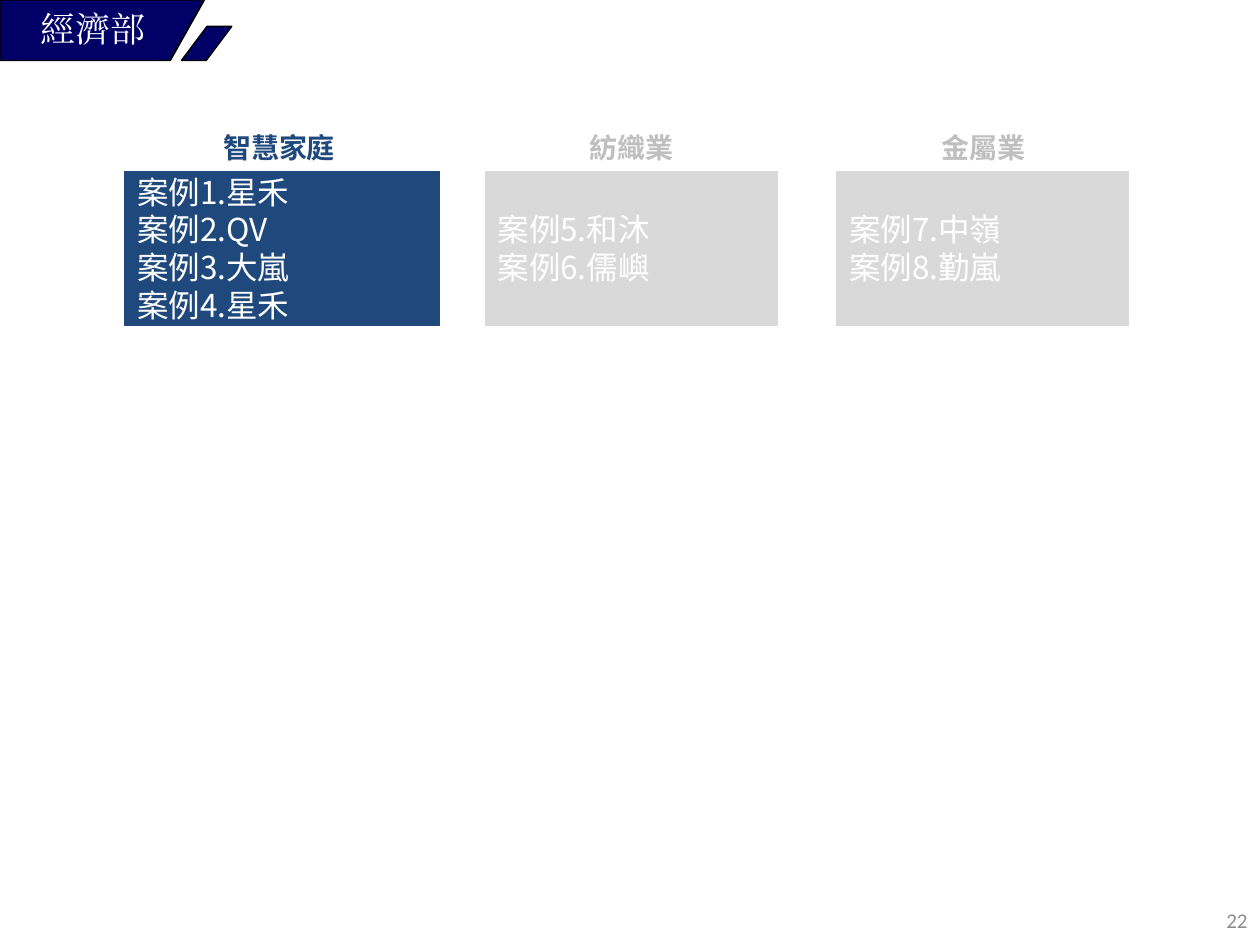
from dataclasses import dataclass

import pptx
import pptx.util
import pptx.dml.color
import pptx.enum.shapes
import pptx.enum.text
import pptx.oxml.ns
from lxml import etree
from pptx.util import Inches

HUES = {
    "navy": "000066", "blue": "1F497D", "pale": "D9D9D9", "gray": "BFBFBF",
    "page": "8C8C8C", "white": "FFFFFF", "black": "000000",
}
SANS = "Noto Sans CJK SC"
ALIGN = pptx.enum.text.PP_ALIGN
ANCHOR = pptx.enum.text.MSO_ANCHOR
KIND = pptx.enum.shapes.MSO_SHAPE
TOP, HIGH = 1.36, 1.22
HEAD_TOP, HEAD_HIGH = 0.99, 0.37
BAND = [(0, 0), (0, 0.48), (1.35, 0.48), (1.62, 0)]


@dataclass
class Field:
    title: str
    cases: list[str]
    left: float
    width: float
    head_left: float
    head_width: float
    fill: str
    ink: str


FIELDS = [
    Field("智慧家庭", ["星禾", "QV", "大嵐", "星禾"], 0.99, 2.5, 1.39, 1.65, "blue", "blue"),
    Field("紡織業", ["和沐", "儒嶼"], 3.85, 2.32, 4.26, 1.51, "pale", "gray"),
    Field("金屬業", ["中嶺", "勤嵐"], 6.64, 2.32, 7.05, 1.51, "pale", "gray"),
]


def hue(name: str) -> pptx.dml.color.RGBColor:
    return pptx.dml.color.RGBColor.from_string(HUES[name])


def put_text(shape, text: str, *, size: float, color: str, font: str = SANS,
             bold: bool = False, align=ALIGN.LEFT, anchor=ANCHOR.TOP) -> None:
    """Fill a shape with one paragraph for each line of text."""
    frame = shape.text_frame
    frame.word_wrap = True
    frame.vertical_anchor = anchor
    frame.text = text
    for para in frame.paragraphs:
        para.alignment = align
        for run in para.runs:
            run.font.size = pptx.util.Pt(size)
            run.font.bold = bold
            run.font.name = font
            run.font.color.rgb = hue(color)
            east = etree.SubElement(run.font._element, pptx.oxml.ns.qn("a:ea"))
            east.set("typeface", font)


def add_box(slide, left: float, top: float, width: float, high: float):
    return slide.shapes.add_textbox(
        Inches(left), Inches(top), Inches(width), Inches(high))


def paint(shape, fill: str, line: str, weight: float) -> None:
    shape.shadow.inherit = False
    shape.fill.solid()
    shape.fill.fore_color.rgb = hue(fill)
    shape.line.color.rgb = hue(line)
    shape.line.width = pptx.util.Pt(weight)


def add_banner(slide) -> None:
    # Slanted band
    first, *rest = [(Inches(x), Inches(y)) for x, y in BAND]
    form = slide.shapes.build_freeform(*first)
    form.add_line_segments(rest, close=True)
    paint(form.convert_to_shape(), "navy", "black", 0.75)

    # Plain slanted mark beside the band
    mark = slide.shapes.add_shape(KIND.PARALLELOGRAM, Inches(1.44), Inches(0.21),
                                  Inches(0.4), Inches(0.27))
    mark.adjustments[0] = 0.75
    paint(mark, "navy", "black", 0.75)

    # Name and edge line
    put_text(add_box(slide, 0.04, 0.01, 1.4, 0.34), "經濟部", size=20,
             color="white", font="Times New Roman", align=ALIGN.CENTER)
    edge = slide.shapes.add_connector(
        pptx.enum.shapes.MSO_CONNECTOR.STRAIGHT,
        Inches(1.62), Inches(0), Inches(1.35), Inches(0.48))
    edge.line.color.rgb = hue("black")
    edge.line.width = pptx.util.Pt(1)
    etree.SubElement(edge._element.spPr, pptx.oxml.ns.qn("a:effectLst"))


def add_field(slide, field: Field, first: int) -> None:
    head = add_box(slide, field.head_left, HEAD_TOP, field.head_width, HEAD_HIGH)
    put_text(head, field.title, size=16, color=field.ink, bold=True,
             align=ALIGN.CENTER)
    card = slide.shapes.add_shape(KIND.RECTANGLE, Inches(field.left), Inches(TOP),
                                  Inches(field.width), Inches(HIGH))
    paint(card, field.fill, field.fill, 0.5)
    lines = [f"案例{num}.{name}" for num, name in enumerate(field.cases, first)]
    put_text(card, "\n".join(lines), size=18, color="white", anchor=ANCHOR.MIDDLE)


def main() -> None:
    deck = pptx.Presentation()
    deck.slide_width, deck.slide_height = Inches(10), Inches(7.5)
    slide = deck.slides.add_slide(deck.slide_layouts[6])

    add_banner(slide)

    # Fields, with cases numbered straight through
    first = 1
    for field in FIELDS:
        add_field(slide, field, first)
        first += len(field.cases)

    # Page number
    put_text(add_box(slide, 7.67, 7.1, 2.33, 0.4), "22", size=12, color="page",
             font="Calibri", align=ALIGN.RIGHT, anchor=ANCHOR.MIDDLE)
    deck.save("out.pptx")


if __name__ == "__main__":
    main()
